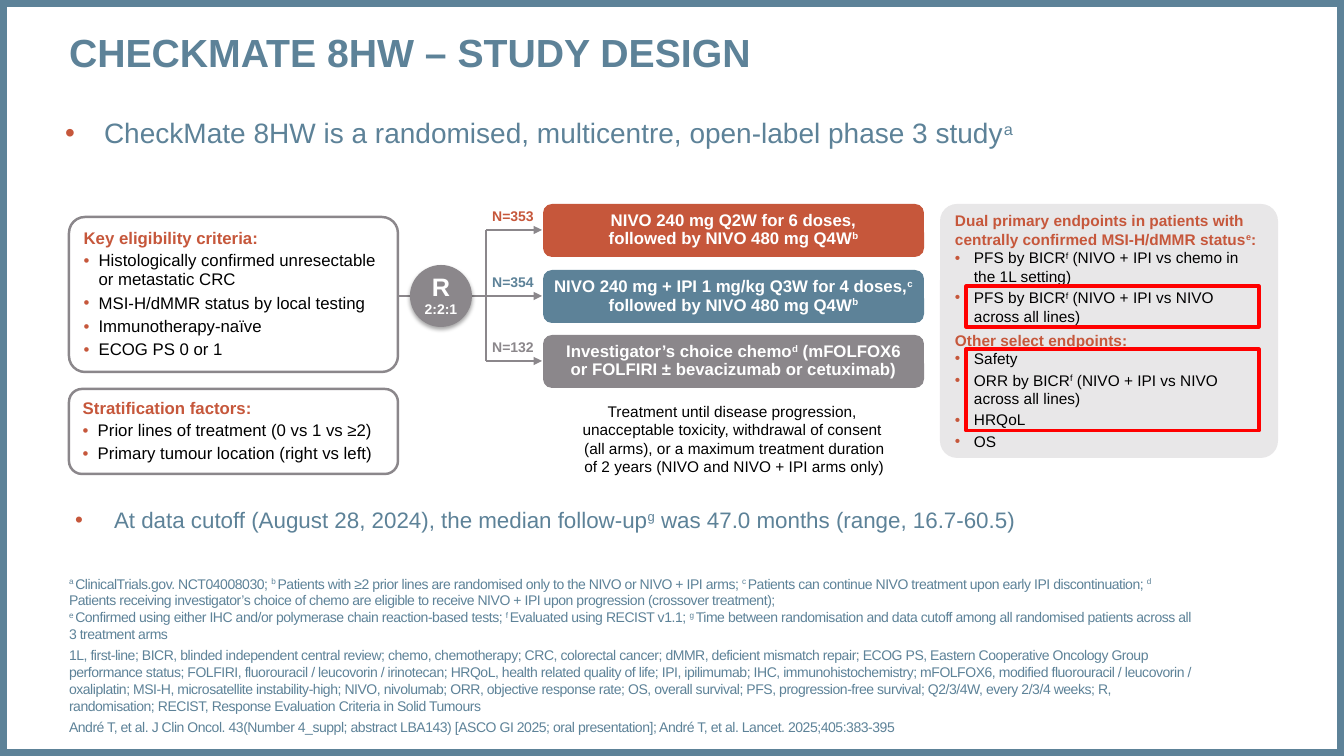
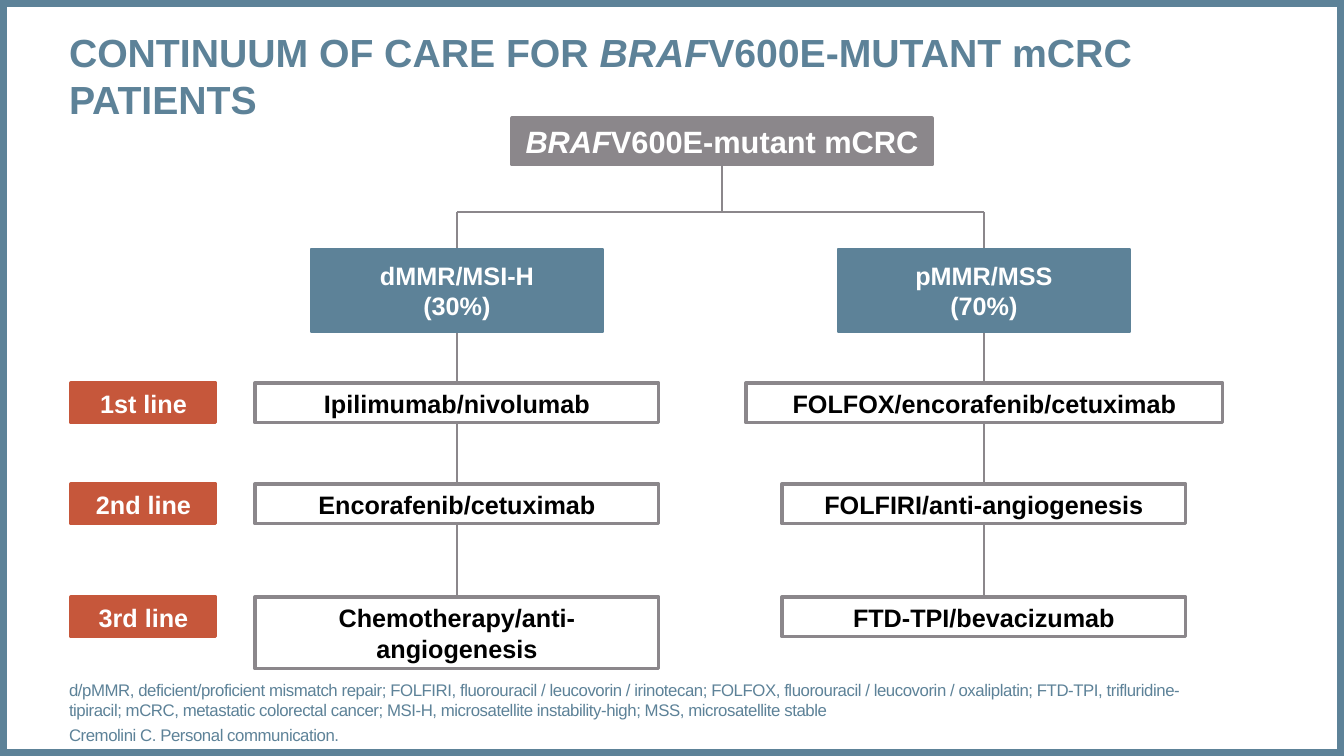
from dataclasses import dataclass, replace
from lxml import etree
from pptx import Presentation
from pptx.dml.color import RGBColor
from pptx.enum.shapes import MSO_CONNECTOR, MSO_SHAPE
from pptx.enum.text import MSO_ANCHOR, MSO_AUTO_SIZE, PP_ALIGN
from pptx.oxml.ns import qn
from pptx.util import Pt

RECTANGLE = MSO_SHAPE.RECTANGLE
ROUNDED = MSO_SHAPE.ROUNDED_RECTANGLE
OVAL = MSO_SHAPE.OVAL
STRAIGHT = MSO_CONNECTOR.STRAIGHT
TOP, MIDDLE, BOTTOM = MSO_ANCHOR.TOP, MSO_ANCHOR.MIDDLE, MSO_ANCHOR.BOTTOM
LEFT, CENTER = PP_ALIGN.LEFT, PP_ALIGN.CENTER

SLIDE_WIDTH, SLIDE_HEIGHT = 1344, 756
SCALE = 12192000 / SLIDE_WIDTH
FONT = "Arial"
BLUE, ORANGE, GREY = "5D8298", "C6573B", "8B878B"
PALE, WHITE, BLACK, RED = "E8E7E8", "FFFFFF", "000000", "FF0000"
INSETS = (10, 5)
NO_INSETS = (0, 0)


@dataclass(frozen=True)
class Style:
    size: int
    color: str = BLACK
    bold: bool = False
    align: int = LEFT
    lines: float = 1.0
    before: int = 0
    after: int = 0
    indent: int = 0
    tracking: float = 0


TITLE = Style(28, BLUE, True)
NOTE = Style(10, BLUE, tracking=-0.3)
CARD_HEAD = Style(12, ORANGE, True, lines=0.95, after=2)
CARD_ITEM = Style(12, lines=0.95, after=3, indent=15)
PANEL_HEAD = Style(11, ORANGE, True)
PANEL_ITEM = Style(11, after=2, indent=19)
ARM = Style(12, WHITE, True, CENTER, 0.9)
BOX = Style(18, BLACK, True, CENTER)
BOX_LIGHT = replace(BOX, color=WHITE)


def px(length):
    return round(length * SCALE)


def rgb(color):
    return RGBColor.from_string(color)


def add_element(parent, tag, **attributes):
    return etree.SubElement(parent, qn(tag), attributes)


def add_runs(paragraph, text, style):
    for i, piece in enumerate(text.split("^")):
        for j, part in enumerate(piece.split("~")):
            for k, line in enumerate(part.split("\n")):
                if k:
                    paragraph.add_line_break()
                if not line:
                    continue
                run = paragraph.add_run()
                run.text = line
                font = run.font
                font.name, font.size, font.bold = FONT, Pt(style.size), style.bold
                font.color.rgb = rgb(style.color)
                properties = run._r.get_or_add_rPr()
                if i % 2:
                    properties.set("baseline", "30000")
                if j % 2:
                    font.italic = True
                if style.tracking:
                    properties.set("spc", str(round(style.tracking * 100)))


def write(shape, entries, anchor=MIDDLE, insets=INSETS):
    frame = shape.text_frame
    frame.word_wrap = True
    frame.auto_size = MSO_AUTO_SIZE.NONE
    frame.vertical_anchor = anchor
    frame.margin_left = frame.margin_right = px(insets[0])
    frame.margin_top = frame.margin_bottom = px(insets[1])
    for index, (text, style) in enumerate(entries):
        paragraph = frame.add_paragraph() if index else frame.paragraphs[0]
        if style.indent:
            properties = paragraph._p.get_or_add_pPr()
            properties.set("marL", str(px(style.indent)))
            properties.set("indent", str(-px(style.indent)))
            add_element(add_element(properties, "a:buClr"), "a:srgbClr", val=ORANGE)
            add_element(properties, "a:buFont", typeface=FONT)
            add_element(properties, "a:buChar", char="•")
        paragraph.alignment = style.align
        paragraph.line_spacing = style.lines
        paragraph.space_before = Pt(style.before if index else 0)
        paragraph.space_after = Pt(style.after)
        add_runs(paragraph, text, style)


def add_box(slide, box, fill=None, line=None, width=2.25, kind=RECTANGLE, radius=0):
    shape = slide.shapes.add_shape(kind, *map(px, box))
    shape.shadow.inherit = False
    if kind == ROUNDED:
        shape.adjustments[0] = round(radius / min(box[2:]), 3)
    if fill:
        shape.fill.solid()
        shape.fill.fore_color.rgb = rgb(fill)
    else:
        shape.fill.background()
    if line:
        shape.line.color.rgb = rgb(line)
        shape.line.width = Pt(width)
    else:
        shape.line.fill.background()
    return shape


def add_text(slide, box, entries, anchor=TOP):
    write(slide.shapes.add_textbox(*map(px, box)), entries, anchor, NO_INSETS)


def add_line(slide, start, end, arrow=False):
    connector = slide.shapes.add_connector(STRAIGHT, *map(px, start + end))
    connector.line.color.rgb = rgb(GREY)
    connector.line.width = Pt(2)
    properties = connector._element.spPr
    if arrow:
        add_element(properties.find(qn("a:ln")), "a:tailEnd", type="triangle")
    add_element(properties, "a:effectLst")


def add_frame(layout, slide):
    frame = add_box(slide, (0, 0, SLIDE_WIDTH, SLIDE_HEIGHT), line=BLUE, width=10)
    layout.shapes._spTree.insert(2, frame._element)


def add_titled_slide(presentation, layout, title):
    slide = presentation.slides.add_slide(layout)
    shape = slide.shapes.title
    shape.left, shape.top, shape.width, shape.height = map(px, (69, 28, 1209, 95))
    write(shape, [(title, TITLE)], TOP, NO_INSETS)
    return slide


def add_card(slide, box, heading, items, radius):
    card = add_box(slide, box, WHITE, GREY, 1.75, ROUNDED, radius)
    write(card, [(heading, CARD_HEAD)] + [(item, CARD_ITEM) for item in items])


def add_randomisation(slide, box):
    left, top, width, height = box
    trunk, arms_left, arm_height, pitch = left + 88, left + 145, 53, 65.5
    arms = [
        ("N=353", ORANGE, "NIVO 240 mg Q2W for 6 doses,\nfollowed by NIVO 480 mg Q4W^b^", INSETS),
        ("N=354", BLUE, "NIVO 240 mg + IPI 1 mg/kg Q3W for 4 doses,^c\n^followed by NIVO 480 mg Q4W^b^", (4, 5)),
        ("N=132", GREY, "Investigator’s choice chemo^d^ (mFOLFOX6 or FOLFIRI ± bevacizumab or cetuximab)", INSETS),
    ]
    tops = [round(top + pitch * index) for index in range(len(arms))]
    centres = [arm_top + arm_height // 2 for arm_top in tops]
    add_line(slide, (trunk, centres[0]), (trunk, centres[-1]))
    for arm_top, centre, (count, color, text, insets) in zip(tops, centres, arms):
        start = left if centre == centres[1] else trunk
        add_line(slide, (start, centre), (arms_left - 1, centre), arrow=True)
        arm_box = (arms_left, arm_top, left + width - arms_left, arm_height)
        write(add_box(slide, arm_box, color, kind=ROUNDED, radius=9), [(text, ARM)], insets=insets)
        label = Style(10, color, True, CENTER, 0.9)
        add_text(slide, (trunk - 7, arm_top + 5, 68, 15), [(count, label)])

    diameter = 62
    circle = add_box(slide, (left + 12, centres[1] - diameter // 2, diameter, diameter), GREY, kind=OVAL)
    effects = circle._element.spPr.find(qn("a:effectLst"))
    shadow = add_element(effects, "a:outerShdw", blurRad=str(Pt(3.1)), dist=str(Pt(1.8)),
                         dir="5400000", algn="t", rotWithShape="0")
    add_element(add_element(shadow, "a:srgbClr", val=BLACK), "a:alpha", val="35000")
    write(circle, [("R", replace(ARM, size=18)), ("2:2:1", replace(ARM, size=10))], insets=(0, 5))

    duration = ("Treatment until disease progression, \nunacceptable toxicity, withdrawal of consent \n"
                "(all arms), or a maximum treatment duration\nof 2 years (NIVO and NIVO + IPI arms only)")
    add_text(slide, (arms_left + 3, top + height - 75, 377, 75), [(duration, Style(11, align=CENTER))])


def add_endpoints(slide, box):
    left, top, width, height = box
    write(add_box(slide, box, PALE, kind=ROUNDED, radius=17), [
        ("Dual primary endpoints in patients with centrally confirmed MSI-H/dMMR status^e^:", PANEL_HEAD),
        ("PFS by BICR^f^ (NIVO + IPI vs chemo in the 1L setting)", PANEL_ITEM),
        ("PFS by BICR^f^ (NIVO + IPI vs NIVO \nacross all lines)", PANEL_ITEM),
        ("Other select endpoints:", replace(PANEL_HEAD, before=2)),
        ("Safety", PANEL_ITEM),
        ("ORR by BICR^f^ (NIVO + IPI vs NIVO across all lines)", PANEL_ITEM),
        ("HRQoL", PANEL_ITEM),
        ("OS", PANEL_ITEM),
    ])
    for offset, highlight_height in ((82, 41), (145, 82)):
        add_box(slide, (left + 26, top + offset, width - 45, highlight_height), line=RED)


def fill_study_design(slide):
    lead = Style(20, BLUE, indent=39)
    add_text(slide, (65, 116, 1209, 52), [
        ("CheckMate 8HW is a randomised, multicentre, open-label phase 3 study^a^", lead)])
    add_randomisation(slide, (398, 204, 526, 273))
    add_card(slide, (69, 217, 329, 155), "Key eligibility criteria:", [
        "Histologically confirmed unresectable or metastatic CRC",
        "MSI-H/dMMR status by local testing",
        "Immunotherapy-naïve",
        "ECOG PS 0 or 1",
    ], 16)
    add_card(slide, (69, 389, 329, 85), "Stratification factors:", [
        "Prior lines of treatment (0 vs 1 vs ≥2)",
        "Primary tumour location (right vs left)",
    ], 13)
    add_endpoints(slide, (940, 204, 338, 254))
    add_text(slide, (75, 506, 1209, 71), [
        ("At data cutoff (August 28, 2024), the median follow-up^g^ was 47.0 months (range, 16.7-60.5)",
         replace(lead, size=16))])
    following = replace(NOTE, before=3)
    add_text(slide, (69, 695, 1122, 40), [
        ("^a ^ClinicalTrials.gov. NCT04008030; ^b ^Patients with ≥2 prior lines are randomised only to the "
         "NIVO or NIVO + IPI arms; ^c ^Patients can continue NIVO treatment upon early IPI discontinuation; "
         "^d ^Patients receiving investigator’s choice of chemo are eligible to receive NIVO + IPI upon "
         "progression (crossover treatment); \n^e ^Confirmed using either IHC and/or polymerase chain "
         "reaction-based tests; ^f ^Evaluated using RECIST v1.1; ^g ^Time between randomisation and data "
         "cutoff among all randomised patients across all 3 treatment arms", NOTE),
        ("1L, first-line; BICR, blinded independent central review; chemo, chemotherapy; CRC, colorectal "
         "cancer; dMMR, deficient mismatch repair; ECOG PS, Eastern Cooperative Oncology Group performance "
         "status; FOLFIRI, fluorouracil / leucovorin / irinotecan; HRQoL, health related quality of life; "
         "IPI, ipilimumab; IHC, immunohistochemistry; mFOLFOX6, modified fluorouracil / leucovorin / "
         "oxaliplatin; MSI‑H, microsatellite instability-high; NIVO, nivolumab; ORR, objective response "
         "rate; OS, overall survival; PFS, progression-free survival; Q2/3/4W, every 2/3/4 weeks; "
         "R, randomisation; RECIST, Response Evaluation Criteria in Solid Tumours", following),
        ("André T, et al. J Clin Oncol. 43(Number 4_suppl; abstract LBA143) [ASCO GI 2025; oral "
         "presentation]; André T, et al. Lancet. 2025;405:383-395", following),
    ], BOTTOM)


def add_care_tree(slide, box):
    left, top, width, height = box
    root_centre, root_height, junction = left + 653, 47, top + 94
    row_tops = [top + 265, top + 366, top + 479]
    branches = [
        (left + 388, "dMMR/MSI-H", "(30%)", [
            ("Ipilimumab/nivolumab", 404, 40),
            ("Encorafenib/cetuximab", 404, 40),
            ("Chemotherapy/anti-angiogenesis", 404, 72)]),
        (left + 915, "pMMR/MSS", "(70%)", [
            ("FOLFOX/encorafenib/cetuximab", 477, 40),
            ("FOLFIRI/anti-angiogenesis", 404, 40),
            ("FTD-TPI/bevacizumab", 404, 40)]),
    ]
    add_line(slide, (root_centre, top + root_height), (root_centre, junction))
    add_line(slide, (branches[0][0], junction), (branches[1][0], junction))
    root = add_box(slide, (root_centre - 210, top, 420, root_height), GREY, GREY)
    write(root, [("~BRAF~V600E-mutant mCRC", replace(BOX_LIGHT, size=22))])
    for centre, name, share, treatments in branches:
        add_line(slide, (centre, junction), (centre, row_tops[-1]))
        head = add_box(slide, (centre - 146, top + 131, 292, 83), BLUE, BLUE, 1.75)
        write(head, [(name, BOX_LIGHT), (share, BOX_LIGHT)])
        for row_top, (text, box_width, box_height) in zip(row_tops, treatments):
            treatment_box = (centre - box_width // 2, row_top, box_width, box_height)
            write(add_box(slide, treatment_box, WHITE, GREY), [(text, BOX)])
    for row_top, label in zip(row_tops, ("1st line", "2nd line", "3rd line")):
        write(add_box(slide, (left + 2, row_top, 145, 40), ORANGE, ORANGE), [(label, BOX_LIGHT)])


def fill_care_continuum(slide):
    add_care_tree(slide, (69, 118, 1152, 551))
    note = replace(NOTE, size=12)
    add_text(slide, (69, 680, 1122, 63), [
        ("d/pMMR, deficient/proficient mismatch repair; FOLFIRI, fluorouracil / leucovorin / irinotecan; "
         "FOLFOX, fluorouracil / leucovorin / oxaliplatin; FTD-TPI, trifluridine-tipiracil; mCRC, metastatic "
         "colorectal cancer; MSI-H, microsatellite instability-high; MSS, microsatellite stable", note),
        ("Cremolini C. Personal communication.", replace(note, before=3)),
    ])


def main():
    presentation = Presentation()
    presentation.slide_width = px(SLIDE_WIDTH)
    presentation.slide_height = px(SLIDE_HEIGHT)
    layout = presentation.slide_layouts[5]
    design = add_titled_slide(presentation, layout, "CHECKMATE 8HW – STUDY DESIGN")
    add_frame(layout, design)
    fill_study_design(design)
    fill_care_continuum(add_titled_slide(
        presentation, layout, "CONTINUUM OF CARE FOR ~BRAF~V600E-MUTANT mCRC PATIENTS"))
    presentation.save("out.pptx")


if __name__ == "__main__":
    main()
